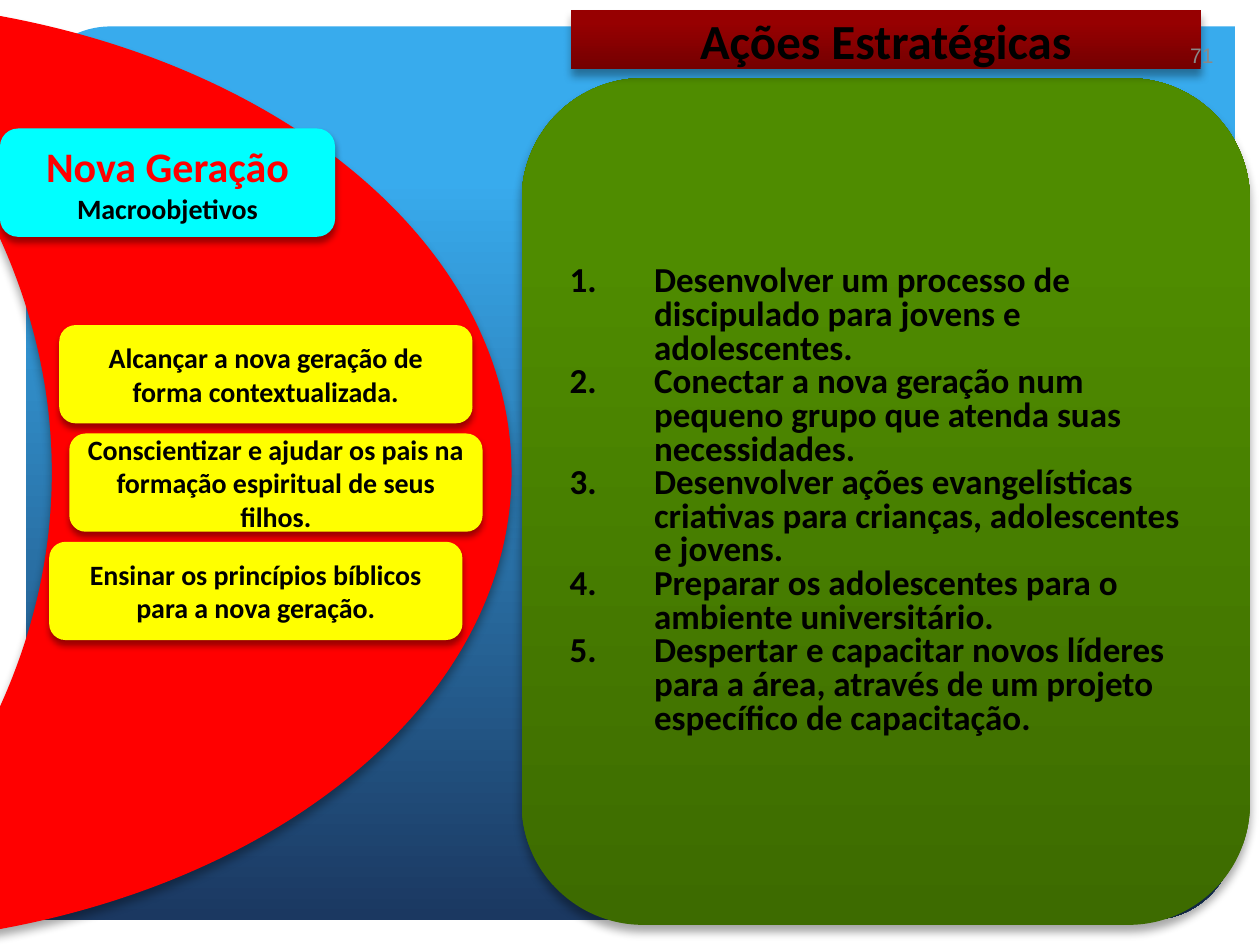
from lxml.etree import SubElement
from pptx import Presentation
from pptx.dml.color import RGBColor
from pptx.enum.shapes import MSO_SHAPE
from pptx.enum.text import MSO_ANCHOR, MSO_AUTO_SIZE, PP_ALIGN
from pptx.oxml.ns import qn
from pptx.util import Inches, Pt

COLORS = {
    "red": "FF0000", "cyan": "00FFFF", "yellow": "FFFF00",
    "black": "000000", "gray": "898989",
    "sky": "38ABED", "navy": "1B3861",
    "moss": "3D6B00", "green": "4F8C00",
    "wine": "740001", "crimson": "970001",
}
# Opacity in percent, blur and distance in points
DEEP_SHADOW = (35, 5, 4)
SOFT_SHADOW = (40, 4, 3)


def rgb(name):
    return RGBColor.from_string(COLORS[name])


class SlideBuilder:
    font = "Calibri"

    def __init__(self, s):
        self.s = s

    def paint(self, sp, fill, shadow=None, angle=90):
        """Fill with a colour name, or with a list of (position, name) stops."""
        if isinstance(fill, str):
            sp.fill.solid()
            sp.fill.fore_color.rgb = rgb(fill)
        else:
            sp.fill.gradient()
            sp.fill.gradient_angle = angle
            for stop, (position, name) in zip(sp.fill.gradient_stops, fill):
                stop.position = position
                stop.color.rgb = rgb(name)
        sp.line.fill.background()
        sp.shadow.inherit = False
        if shadow:
            self.add_shadow(sp, *shadow)

    def add_shadow(self, sp, opacity, blur, distance):
        effects = sp._element.spPr.find(qn("a:effectLst"))
        outer = SubElement(effects, qn("a:outerShdw"), blurRad=str(Pt(blur)),
                           dist=str(Pt(distance)), dir="5400000", rotWithShape="0")
        color = SubElement(outer, qn("a:srgbClr"), val=COLORS["black"])
        SubElement(color, qn("a:alpha"), val=str(opacity * 1000))

    def shape(self, kind, box, fill, shadow=None, angle=90, adj=()):
        sp = self.s.shapes.add_shape(kind, *map(Inches, box))
        for i, value in enumerate(adj):
            sp.adjustments[i] = value
        self.paint(sp, fill, shadow, angle)
        return sp

    def style(self, r, size, color="black", bold=True, font=None):
        r.font.name = font or self.font
        r.font.size = Pt(size)
        r.font.bold = bold
        r.font.color.rgb = rgb(color)

    def frame(self, sp):
        tf = sp.text_frame
        tf.word_wrap = True
        tf.auto_size = MSO_AUTO_SIZE.NONE
        tf.vertical_anchor = MSO_ANCHOR.MIDDLE
        return tf

    def title(self, text, box, fill, shadow):
        sp = self.s.shapes.title
        sp.left, sp.top, sp.width, sp.height = map(Inches, box)
        geometry = SubElement(sp._element.spPr, qn("a:prstGeom"), prst="roundRect")
        SubElement(geometry, qn("a:avLst"))
        self.paint(sp, fill, shadow)
        tf = self.frame(sp)
        tf.text = text
        p = tf.paragraphs[0]
        p.alignment = PP_ALIGN.CENTER
        self.style(p.runs[0], 28)
        self.s.shapes._spTree.append(sp._element)  # bring to front

    def card(self, box, fill, runs):
        sp = self.shape(MSO_SHAPE.ROUNDED_RECTANGLE, box, fill, SOFT_SHADOW)
        p = self.frame(sp).paragraphs[0]
        p.alignment = PP_ALIGN.CENTER
        for text, size, color in runs:
            r = p.add_run()
            r.text = text
            self.style(r, size, color)

    def numbered_panel(self, box, fill, items):
        sp = self.shape(MSO_SHAPE.ROUNDED_RECTANGLE, box, fill, DEEP_SHADOW)
        tf = self.frame(sp)
        tf.text = "\n".join(items)
        indent = Inches(0.67)
        for p in tf.paragraphs:
            p.alignment = PP_ALIGN.LEFT
            p.line_spacing = 0.8
            pPr = p._p.get_or_add_pPr()
            pPr.set("marL", str(indent))
            pPr.set("indent", str(-indent))
            SubElement(pPr, qn("a:buFont"), typeface=self.font)
            SubElement(pPr, qn("a:buAutoNum"), type="arabicPeriod")
            self.style(p.runs[0], 20)

    def page_number(self, text, box):
        tf = self.frame(self.s.shapes.add_textbox(*map(Inches, box)))
        tf.text = text
        p = tf.paragraphs[0]
        p.alignment = PP_ALIGN.RIGHT
        self.style(p.runs[0], 12, "gray", bold=False, font="Arial")


def main():
    prs = Presentation()
    prs.slide_width, prs.slide_height = Inches(10), Inches(7.5)
    b = SlideBuilder(prs.slides.add_slide(prs.slide_layouts[5]))

    # Background panel and crescent
    b.shape(MSO_SHAPE.ROUND_2_DIAG_RECTANGLE, (0.21, 0.21, 9.59, 7.09),
            [(0.17, "sky"), (1, "navy")], angle=270, adj=(0.094, 0))
    moon = b.shape(MSO_SHAPE.MOON, (-1.41, 0, 5.47, 7.5), "red",
                   DEEP_SHADOW, adj=(0.667,))
    moon.rotation = 180

    # Strategic actions
    b.numbered_panel((4.14, 0.62, 5.78, 6.72), [(0, "moss"), (0.8, "green")], [
        "Desenvolver um processo de discipulado para jovens e adolescentes.",
        "Conectar a nova geração num pequeno grupo que atenda suas necessidades.",
        "Desenvolver ações evangelísticas criativas para crianças, adolescentes e jovens.",
        "Preparar os adolescentes para o ambiente universitário.",
        "Despertar e capacitar novos líderes para a área, através de um projeto "
        "específico de capacitação.",
    ])
    b.title("Ações Estratégicas", (4.53, 0.08, 5, 0.47),
            [(0, "wine"), (0.8, "crimson")], DEEP_SHADOW)

    # Macro-objectives
    b.card((0, 1.02, 2.66, 0.86), "cyan",
           [("Nova Geração ", 24, "red"), ("Macroobjetivos", 16, "black")])
    objectives = [
        (0.47, "Alcançar a nova geração de forma contextualizada."),
        (0.55, "Conscientizar e ajudar os pais na formação espiritual de seus filhos."),
        (0.39, "Ensinar os princípios bíblicos para a nova geração."),
    ]
    for i, (left, text) in enumerate(objectives):
        b.card((left, 2.58 + 0.86 * i, 3.28, 0.78), "yellow", [(text, 16, "black")])

    # Page number
    b.page_number("71", (9.19, 0.24, 0.54, 0.4))

    prs.save("out.pptx")


if __name__ == "__main__":
    main()
